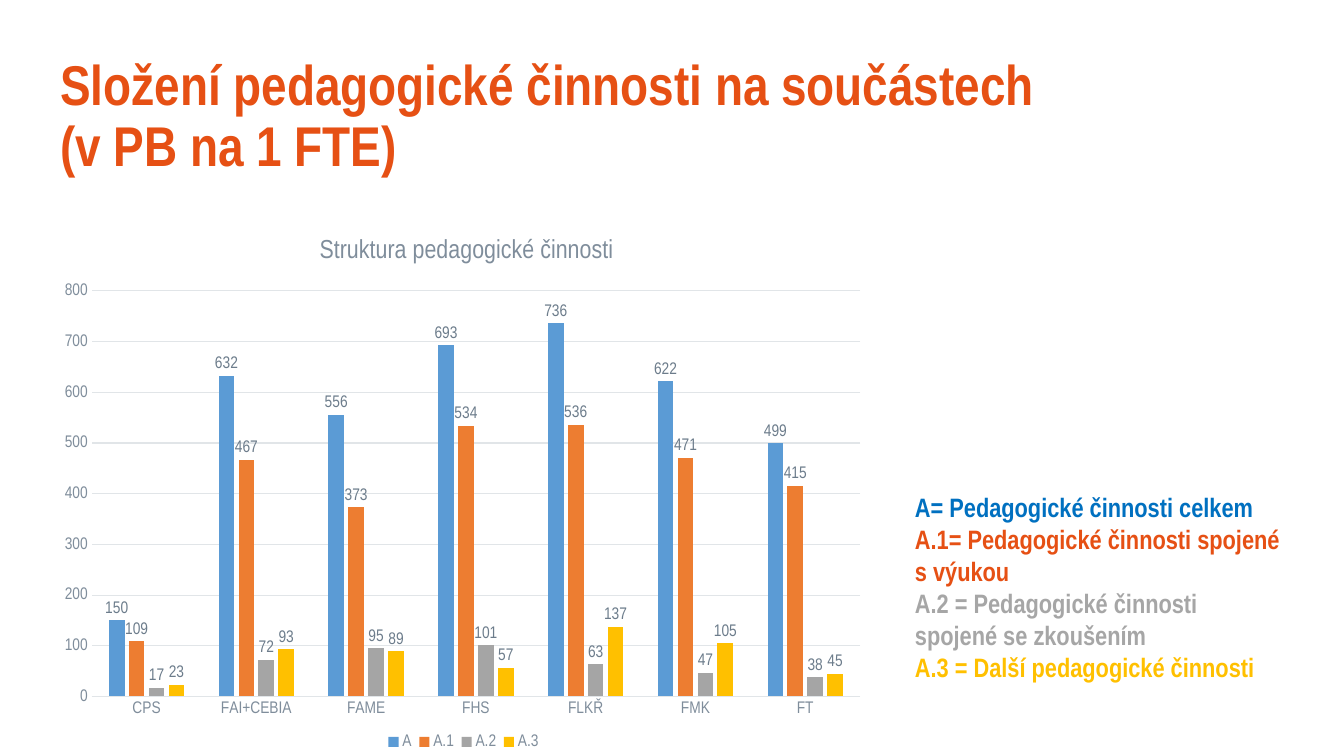
import pptx
import pptx.chart.data
import pptx.dml.color
import pptx.enum.chart
import pptx.enum.text
import pptx.oxml
import pptx.oxml.ns
import pptx.util

PX = 9525  # EMU per px, 96 px to the inch
FONT = "Arial Narrow"
COLORS = {
    "orange": "E65014", "blue": "0070C0", "gray": "A6A6A6", "yellow": "FFC000",
    "axis": "7F8D9B", "label": "6C7C8B", "grid": "E1E5E8",
}
FACULTIES = ["CPS", "FAI+CEBIA", "FAME", "FHS", "FLKŘ", "FMK", "FT"]
ACTIVITIES = [
    ("A", "5B9BD5", [150, 632, 556, 693, 736, 622, 499]),
    ("A.1", "ED7D31", [109, 467, 373, 534, 536, 471, 415]),
    ("A.2", "A5A5A5", [17, 72, 95, 101, 63, 47, 38]),
    ("A.3", "FFC000", [23, 93, 89, 57, 137, 105, 45]),
]
EXPLANATIONS = [
    ("A= Pedagogické činnosti celkem", "blue"),
    ("A.1= Pedagogické činnosti spojené s výukou", "orange"),
    ("A.2 = Pedagogické činnosti spojené se zkoušením", "gray"),
    ("A.3 = Další pedagogické činnosti", "yellow"),
]


def rgb(value):
    return pptx.dml.color.RGBColor.from_string(value)


def box(*lengths):
    return [length * PX for length in lengths]


def style_font(font, size, color, bold=False):
    font.name = FONT
    font.size = pptx.util.Pt(size)
    font.bold = bold
    font.color.rgb = rgb(COLORS[color])


def add_run(paragraph, text, size, color, bold=False):
    run = paragraph.add_run()
    run.text = text
    style_font(run.font, size, color, bold)


def add_text_box(slide, position):
    frame = slide.shapes.add_textbox(*box(*position)).text_frame
    frame.word_wrap = True
    return frame


def add_heading(slide, lines, position):
    frame = add_text_box(slide, position)
    frame.vertical_anchor = pptx.enum.text.MSO_ANCHOR.MIDDLE
    paragraph = frame.paragraphs[0]
    paragraph.line_spacing = 0.9
    for number, line in enumerate(lines):
        if number:
            paragraph.add_line_break()
        add_run(paragraph, line, 40, "orange", True)


def add_explanations(slide, position):
    frame = add_text_box(slide, position)
    frame.auto_size = pptx.enum.text.MSO_AUTO_SIZE.SHAPE_TO_FIT_TEXT
    for number, (text, color) in enumerate(EXPLANATIONS):
        paragraph = frame.add_paragraph() if number else frame.paragraphs[0]
        add_run(paragraph, text, 19, color, True)


def place_chart_part(element, index, inner=False, **fractions):
    """Set a manual layout, given as fractions of the chart area."""
    for layout in element.findall(pptx.oxml.ns.qn("c:layout")):
        element.remove(layout)
    target = '<c:layoutTarget val="inner"/>' if inner else ""
    modes = '<c:xMode val="edge"/><c:yMode val="edge"/>'
    values = "".join(f'<c:{name} val="{value}"/>' for name, value in fractions.items())
    element.insert(index, pptx.oxml.parse_xml(
        f'<c:layout {pptx.oxml.ns.nsdecls("c")}><c:manualLayout>'
        f"{target}{modes}{values}</c:manualLayout></c:layout>"))


def style_axes(chart):
    for axis in (chart.category_axis, chart.value_axis):
        axis.major_tick_mark = pptx.enum.chart.XL_TICK_MARK.NONE
        axis.minor_tick_mark = pptx.enum.chart.XL_TICK_MARK.NONE
        style_font(axis.tick_labels.font, 12, "axis")
    chart.value_axis.minimum_scale = 0
    chart.value_axis.maximum_scale = 800
    chart.value_axis.major_unit = 100
    chart.value_axis.format.line.fill.background()
    gridlines = chart.value_axis.major_gridlines
    for line in (chart.category_axis.format.line, gridlines.format.line):
        line.color.rgb = rgb(COLORS["grid"])
        line.width = pptx.util.Pt(0.75)


def style_series(plot):
    plot.gap_width = 219
    plot.overlap = -27
    plot.vary_by_categories = False
    for series, (_, color, _) in zip(plot.series, ACTIVITIES):
        series.format.fill.solid()
        series.format.fill.fore_color.rgb = rgb(color)
        labels = series.data_labels
        labels.show_value = True
        labels.position = pptx.enum.chart.XL_LABEL_POSITION.OUTSIDE_END
        style_font(labels.font, 12, "label")


def add_activity_chart(slide, title, position):
    data = pptx.chart.data.CategoryChartData()
    data.categories = FACULTIES
    for name, _, values in ACTIVITIES:
        data.add_series(name, values)
    chart = slide.shapes.add_chart(
        pptx.enum.chart.XL_CHART_TYPE.COLUMN_CLUSTERED, *box(*position), data).chart
    chart.font.name = FONT
    chart.font.size = pptx.util.Pt(10)
    style_axes(chart)
    style_series(chart.plots[0])

    # Chart title and legend
    chart.has_title = True
    add_run(chart.chart_title.text_frame.paragraphs[0], title, 18.6, "axis")
    chart.has_legend = True
    chart.legend.position = pptx.enum.chart.XL_LEGEND_POSITION.BOTTOM
    chart.legend.include_in_layout = False
    style_font(chart.legend.font, 12, "axis")

    # Placement inside the chart area
    plot_area = chart.element.find(".//" + pptx.oxml.ns.qn("c:plotArea"))
    place_chart_part(plot_area, 0, inner=True, x=0.05, y=0.14, w=0.93, h=0.75)
    place_chart_part(chart.chart_title._element, 1, x=0.32, y=0.03)
    place_chart_part(chart.legend._element, 1, x=0.4, y=0.96, w=0.2, h=0.04)


def main():
    presentation = pptx.Presentation()
    presentation.slide_width, presentation.slide_height = box(1280, 720)
    slide = presentation.slides.add_slide(presentation.slide_layouts[6])

    # Heading
    add_heading(slide, ["Složení pedagogické činnosti na součástech", "(v PB na 1 FTE)"],
                (48, 43, 1086, 139))
    # Column chart
    add_activity_chart(slide, "Struktura pedagogické činnosti", (48, 205, 787, 515))
    # Meaning of the series names
    add_explanations(slide, (862, 463, 370, 194))

    presentation.save("out.pptx")


if __name__ == "__main__":
    main()
